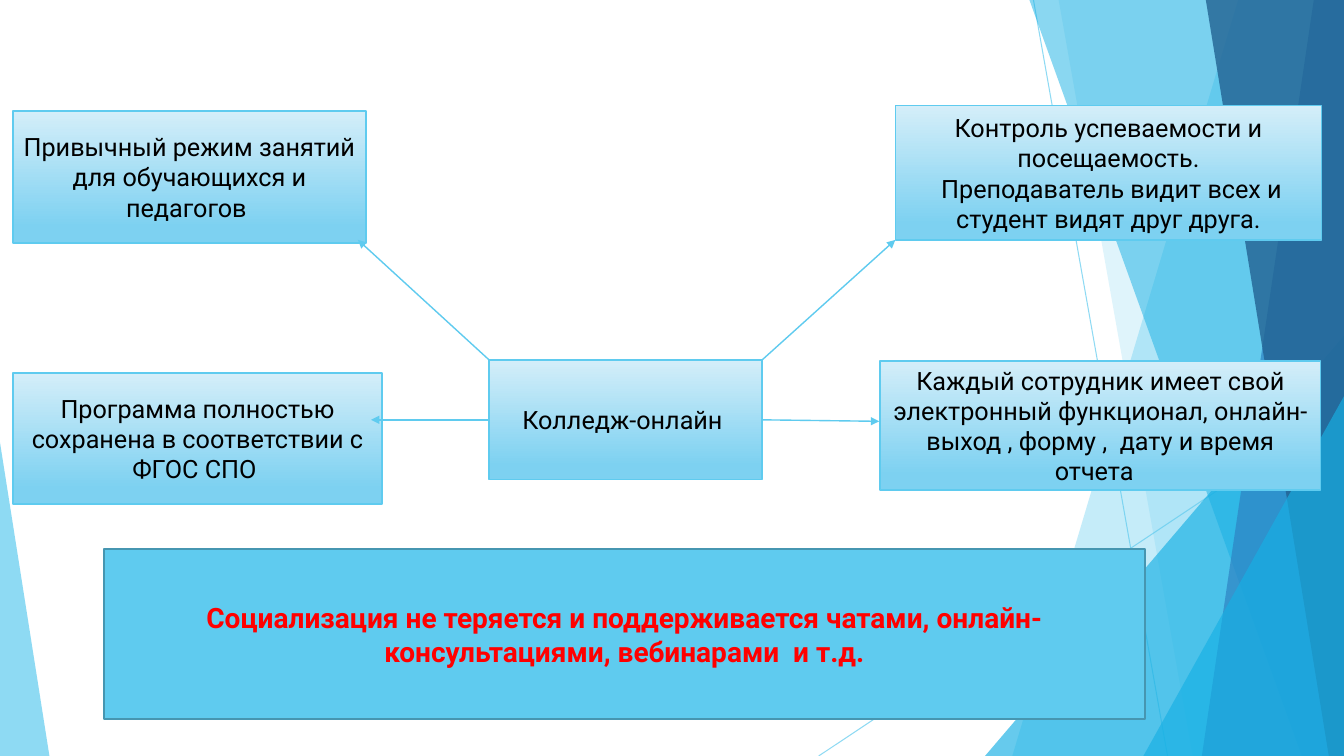
from dataclasses import dataclass

from lxml.etree import SubElement
from pptx import Presentation
from pptx.dml.color import RGBColor
from pptx.enum.shapes import MSO_CONNECTOR, MSO_SHAPE
from pptx.enum.text import MSO_ANCHOR, PP_ALIGN
from pptx.oxml.ns import qn
from pptx.util import Inches, Pt


@dataclass(frozen=True)
class Theme:
    font: str = "Roboto"
    sky: str = "5FCBEF"
    azure: str = "17B0E4"
    blue: str = "2E83C3"
    navy: str = "226292"
    card_top: str = "D4EEF9"
    card_bottom: str = "7DD1F1"
    banner_edge: str = "4696B1"
    ink: str = "000000"
    accent: str = "FF0000"
    card_size: int = 18
    banner_size: int = 20


THEME = Theme()
WIDTH, HEIGHT = 13.33, 7.5


def rgb(value):
    return RGBColor.from_string(value)


def paint(fill, color, opacity=100):
    fill.solid()
    fill.fore_color.rgb = rgb(color)
    if opacity < 100:
        node = fill.fore_color._xFill.find(qn("a:srgbClr"))
        SubElement(node, qn("a:alpha")).set("val", str(opacity * 1000))


def paint_gradient(fill):
    fill.gradient()
    fill.gradient_angle = 270
    stops = ((0, THEME.card_top), (0.88, THEME.card_bottom))
    for stop, (position, color) in zip(fill.gradient_stops, stops):
        stop.position = position
        stop.color.rgb = rgb(color)


def add_line(page, start, end, width=1, opacity=100, arrow=False):
    line = page.shapes.add_connector(
        MSO_CONNECTOR.STRAIGHT, *(Inches(value) for value in (*start, *end))
    )
    line.line.width = Pt(width)
    paint(line.line.fill, THEME.sky, opacity)
    if arrow:
        SubElement(line.line._get_or_add_ln(), qn("a:tailEnd")).set("type", "triangle")
    SubElement(line._element.spPr, qn("a:effectLst"))


def add_band(page, top_left, bottom_left, color, opacity):
    builder = page.shapes.build_freeform(Inches(top_left), 0)
    corners = ((WIDTH, 0), (WIDTH, HEIGHT), (bottom_left, HEIGHT))
    builder.add_line_segments([(Inches(x), Inches(y)) for x, y in corners])
    band = builder.convert_to_shape()
    band.shadow.inherit = False
    paint(band.fill, color, opacity)
    band.line.fill.background()


def add_triangle(page, left, top, width, apex, color, opacity):
    triangle = page.shapes.add_shape(
        MSO_SHAPE.ISOSCELES_TRIANGLE,
        Inches(left), Inches(top), Inches(width), Inches(HEIGHT - top),
    )
    triangle.adjustments[0] = apex
    triangle.shadow.inherit = False
    paint(triangle.fill, color, opacity)
    triangle.line.fill.background()


def add_text(frame, text, *, size, color, bold=False):
    frame.word_wrap = True
    frame.vertical_anchor = MSO_ANCHOR.MIDDLE
    for index, words in enumerate(text.split("\n")):
        para = frame.add_paragraph() if index else frame.paragraphs[0]
        para.alignment = PP_ALIGN.CENTER
        span = para.add_run()
        span.text = words
        span.font.name = THEME.font
        span.font.size = Pt(size)
        span.font.bold = bold
        span.font.color.rgb = rgb(color)


def add_box(page, place, edge, edge_width):
    box = page.shapes.add_shape(MSO_SHAPE.RECTANGLE, *(Inches(value) for value in place))
    box.shadow.inherit = False
    box.line.color.rgb = rgb(edge)
    box.line.width = Pt(edge_width)
    return box


def add_card(page, place, text):
    box = add_box(page, place, THEME.sky, 1)
    paint_gradient(box.fill)
    add_text(box.text_frame, text, size=THEME.card_size, color=THEME.ink)


def add_banner(page, place, text):
    box = add_box(page, place, THEME.banner_edge, 1.5)
    paint(box.fill, THEME.sky)
    add_text(box.text_frame, text, size=THEME.banner_size, color=THEME.accent, bold=True)


def add_backdrop(page):
    add_line(page, (10.25, 0), (11.58, HEIGHT), width=0.75, opacity=70)
    add_line(page, (WIDTH, 4.03), (8.12, HEIGHT), width=0.75, opacity=70)
    add_band(page, 12.28, 10.04, THEME.sky, 36)
    add_band(page, 10.5, 11.83, THEME.sky, 20)
    add_triangle(page, 9.77, 3.33, 3.56, 1, THEME.azure, 66)
    add_band(page, 10.21, 12.91, THEME.azure, 50)
    add_band(page, 13.03, 11.92, THEME.blue, 70)
    add_band(page, 11.96, 13.18, THEME.navy, 80)
    add_triangle(page, 11.34, 3.93, 1.99, 1, THEME.azure, 66)
    add_triangle(page, 0, 4.39, 0.49, 0, THEME.sky, 70)


def main():
    deck = Presentation()
    deck.slide_width, deck.slide_height = Inches(WIDTH), Inches(HEIGHT)
    page = deck.slides.add_slide(deck.slide_layouts[6])
    add_backdrop(page)

    hub_left, hub_top, hub_width, hub_height = hub = (4.85, 3.57, 2.71, 1.19)
    hub_right = hub_left + hub_width
    hub_middle = hub_top + hub_height / 2
    add_card(page, hub, "Колледж-онлайн ")
    add_banner(
        page, (1.03, 5.45, 10.33, 1.68),
        "Социализация не теряется и поддерживается чатами, "
        "онлайн-консультациями, вебинарами  и т.д.",
    )
    cards = (
        ((8.88, 1.05, 4.23, 1.33),
         "Контроль успеваемости и посещаемость.\n"
         " Преподаватель видит всех и студент видят друг друга."),
        ((0.13, 1.1, 3.5, 1.31),
         "Привычный режим занятий для обучающихся и педагогов "),
        ((0.13, 3.7, 3.66, 1.3),
         "Программа полностью сохранена в соответствии с ФГОС СПО "),
        ((8.73, 3.58, 4.37, 1.28),
         "Каждый сотрудник имеет свой электронный функционал, "
         "онлайн- выход , форму ,  дату и время отчета  "),
    )
    for place, text in cards:
        add_card(page, place, text)

    arrows = (
        ((hub_right, hub_middle), (8.72, 4.18)),
        ((hub_left, hub_middle), (3.68, hub_middle)),
        ((hub_right, hub_top), (8.88, 2.38)),
        ((hub_left, hub_top), (3.55, 2.38)),
    )
    for start, end in arrows:
        add_line(page, start, end, arrow=True)
    deck.save("out.pptx")


if __name__ == "__main__":
    main()
